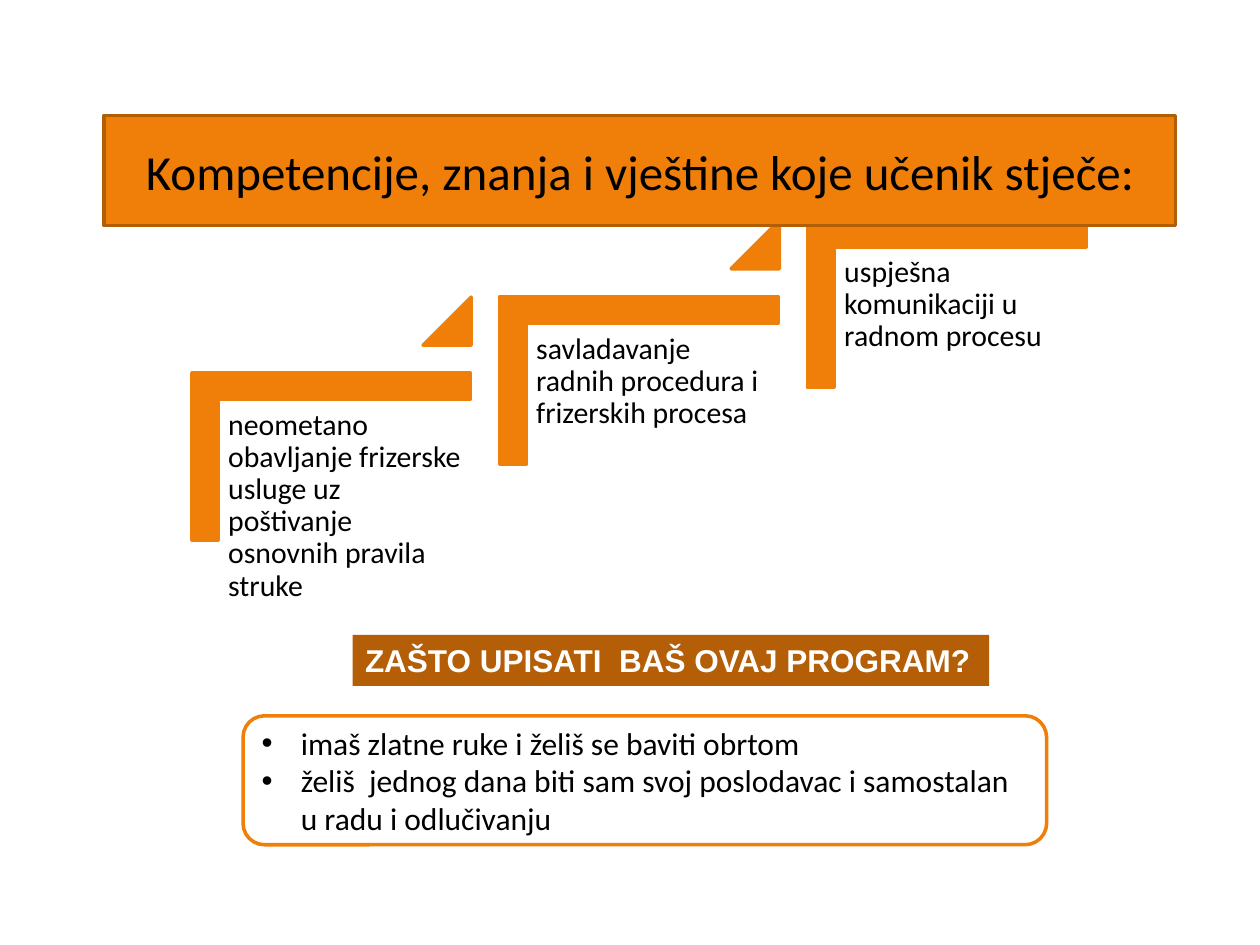
from lxml import etree
from pptx import Presentation
from pptx.dml.color import RGBColor
from pptx.enum.shapes import MSO_SHAPE
from pptx.enum.text import MSO_ANCHOR, MSO_AUTO_SIZE, PP_ALIGN
from pptx.oxml.ns import qn
from pptx.util import Cm, Pt

CORNER, TRIANGLE = MSO_SHAPE.CORNER, MSO_SHAPE.RIGHT_TRIANGLE
TRIANGLE, ROUNDED = MSO_SHAPE.ISOSCELES_TRIANGLE, MSO_SHAPE.ROUNDED_RECTANGLE
TOP, MIDDLE = MSO_ANCHOR.TOP, MSO_ANCHOR.MIDDLE
LEFT, CENTER = PP_ALIGN.LEFT, PP_ALIGN.CENTER

# Content
HEADING = "Kompetencije, znanja i vještine koje učenik stječe:"
SKILLS = [
    "neometano obavljanje frizerske usluge uz poštivanje osnovnih pravila struke",
    "savladavanje radnih procedura i frizerskih procesa",
    "uspješna komunikaciji u radnom procesu",
]
QUESTION = "ZAŠTO UPISATI  BAŠ OVAJ PROGRAM?"
REASONS = [
    "imaš zlatne ruke i želiš se baviti obrtom",
    "želiš  jednog dana biti sam svoj poslodavac i samostalan u radu i odlučivanju",
]

ORANGE, BROWN, LABEL_BROWN = "F07F09", "B25E07", "B45F07"
BLACK, WHITE = "000000", "FFFFFF"

# Staircase: first step's boxes (left, top, width, height) and offset per step, in cm
CORNER_BOX = (4.98, 6.4, 3.38, 5.61)
SKILL_BOX = (4.42, 8.08, 5.08, 4.45)
TRIANGLE_BOX = (8.53, 5.99, 0.97, 0.97)
STEP_X, STEP_Y = 6.21, -1.54


def paint(shape, fill, line):
    if fill:
        shape.fill.solid()
        shape.fill.fore_color.rgb = RGBColor.from_string(fill)
    else:
        shape.fill.background()
    if line:
        shape.line.color.rgb = RGBColor.from_string(line)
        shape.line.width = Pt(2)


def add_shape(kind, box, fill, line):
    shape = slide.shapes.add_shape(kind, *map(Cm, box))
    shape.shadow.inherit = False
    paint(shape, fill, line)
    return shape


def write(shape, lines, size, color=BLACK, font="Calibri", bold=False,
          align=LEFT, anchor=TOP, wrap=True, bullets=False, spacing=1.0):
    frame = shape.text_frame
    frame.word_wrap = wrap
    frame.auto_size = MSO_AUTO_SIZE.NONE
    frame.vertical_anchor = anchor
    for index, line in enumerate(lines):
        paragraph = frame.paragraphs[0] if index == 0 else frame.add_paragraph()
        paragraph.text = line
        paragraph.alignment = align
        paragraph.line_spacing = spacing
        if bullets:
            properties = paragraph._p.get_or_add_pPr()
            properties.set("marL", str(Cm(0.79)))
            properties.set("indent", str(-Cm(0.79)))
            etree.SubElement(properties, qn("a:buFont")).set("typeface", "Arial")
            etree.SubElement(properties, qn("a:buChar")).set("char", "•")
        paragraph.font.name = font
        paragraph.font.size = Pt(size)
        paragraph.font.bold = bold
        paragraph.font.color.rgb = RGBColor.from_string(color)


def shifted(box, step):
    left, top, width, height = box
    return left + step * STEP_X, top + step * STEP_Y, width, height


prs = Presentation()
prs.slide_width, prs.slide_height = Cm(25.4), Cm(19.05)
slide = prs.slides.add_slide(prs.slide_layouts[5])

# Rising steps, with a triangle between neighbours
for step, skill in enumerate(SKILLS):
    corner = add_shape(CORNER, shifted(CORNER_BOX, step), ORANGE, ORANGE)
    corner.rotation = 90
    corner.adjustments[0] = corner.adjustments[1] = 0.16
    skill_text = slide.shapes.add_textbox(*map(Cm, shifted(SKILL_BOX, step)))
    write(skill_text, [skill], 17, spacing=0.9)
    frame = skill_text.text_frame
    frame.margin_left = frame.margin_right = Cm(0.18)
    frame.margin_top = frame.margin_bottom = Cm(0.18)
    if step < len(SKILLS) - 1:
        triangle = add_shape(TRIANGLE, shifted(TRIANGLE_BOX, step), ORANGE, ORANGE)
        triangle.adjustments[0] = 1

# Heading bar, in front of the top step
heading = slide.shapes.title
heading.left, heading.top, heading.width, heading.height = map(Cm, (2.1, 2.33, 21.6, 2.22))
paint(heading, ORANGE, BROWN)
write(heading, [HEADING], 28, align=CENTER, anchor=MIDDLE)
slide.shapes._spTree.append(heading._element)

# Question label
question = slide.shapes.add_textbox(*map(Cm, (7.11, 12.8, 12.83, 1.03)))
paint(question, LABEL_BROWN, None)
write(question, [QUESTION], 18, WHITE, "Arial", bold=True, wrap=False)

# Reasons
reasons = add_shape(ROUNDED, (4.9, 14.43, 16.2, 2.6), None, ORANGE)
write(reasons, REASONS, 18, anchor=MIDDLE, bullets=True)

prs.save("out.pptx")
